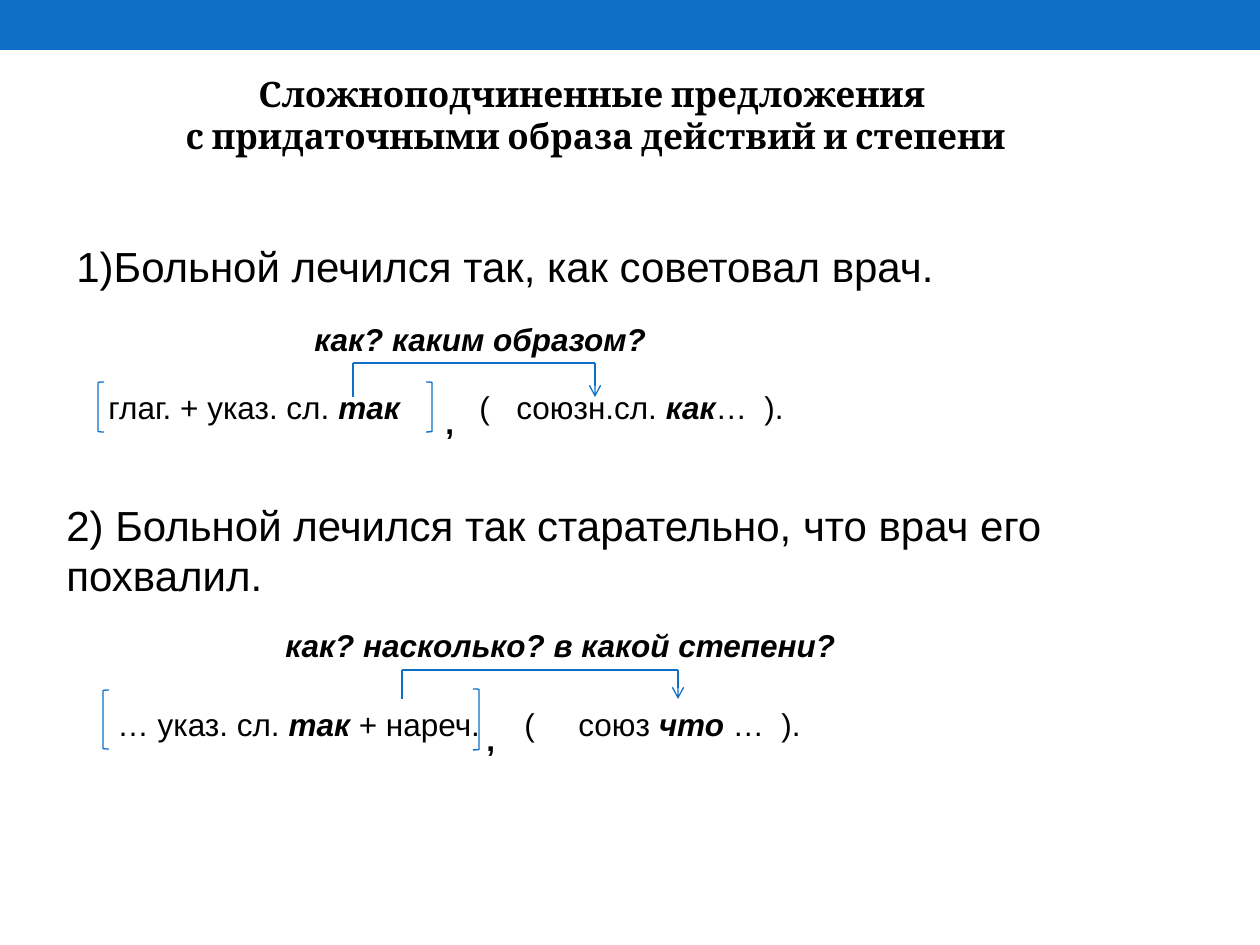
from dataclasses import dataclass
from typing import NamedTuple

import lxml.etree
import pptx
import pptx.dml.color
import pptx.enum.shapes
import pptx.enum.text
import pptx.oxml.ns
import pptx.util

EMU_PER_PX = 914400 / 126
SHAPES = pptx.enum.shapes.MSO_SHAPE


@dataclass(frozen=True)
class Theme:
    accent: pptx.dml.color.RGBColor = pptx.dml.color.RGBColor(0x0F, 0x6F, 0xC6)
    ink: pptx.dml.color.RGBColor = pptx.dml.color.RGBColor(0, 0, 0)
    title_font: str = "Cambria"
    body_font: str = "Arial"
    title_size: int = 20
    sentence_size: int = 24
    scheme_size: int = 18
    line_width: float = 0.75


THEME = Theme()


class Box(NamedTuple):
    left: int
    top: int
    width: int
    height: int


class Run(NamedTuple):
    text: str
    bold: bool = False
    italic: bool = False


class Label(NamedTuple):
    box: Box
    runs: list[Run]
    tabs: tuple[int, ...] = ()


class Arc(NamedTuple):
    left: int
    right: int
    top: int
    bottom: int


@dataclass(frozen=True)
class Scheme:
    sentence: Label
    labels: list[Label]
    left_bracket: Box
    right_bracket: Box
    arc: Arc


def px(value: int) -> pptx.util.Emu:
    return pptx.util.Emu(round(value * EMU_PER_PX))


def term(text: str) -> Run:
    """A bold italic run."""
    return Run(text, True, True)


SCHEMES = [
    Scheme(
        Label(Box(64, 234, 1042, 63), [Run("1)Больной лечился так, как советовал врач.")]),
        [
            Label(Box(96, 382, 320, 50), [Run("глаг. + указ. сл. "), term("так")]),
            Label(Box(433, 397, 35, 50), [Run(",", True)]),
            Label(Box(467, 382, 333, 50),
                  [Run("(\tсоюзн.сл. "), term("как"), Run("…\t).")], (37, 285)),
            Label(Box(302, 314, 369, 50), [term("как? каким образом?")]),
        ],
        Box(98, 382, 6, 50), Box(426, 382, 6, 50), Arc(353, 595, 363, 397),
    ),
    Scheme(
        Label(Box(54, 493, 1131, 115),
              [Run("2) Больной лечился так старательно, что врач его похвалил.")]),
        [
            Label(Box(105, 699, 392, 50),
                  [Run("… указ. сл. "), term("так "), Run("+ нареч.")]),
            Label(Box(474, 714, 43, 50), [Run(",", True)]),
            Label(Box(512, 699, 305, 50),
                  [Run("(\tсоюз "), term("что"), Run(" …\t).")], (54, 257)),
            Label(Box(273, 620, 581, 50), [term("как? насколько? в какой степени?")]),
        ],
        Box(103, 690, 6, 59), Box(473, 689, 6, 61), Arc(402, 678, 670, 699),
    ),
]


def add_run(paragraph, content: Run, font_name: str, size: int) -> None:
    run = paragraph.add_run()
    run.text = content.text
    run.font.name = font_name
    run.font.size = pptx.util.Pt(size)
    run.font.bold = content.bold
    run.font.italic = content.italic
    run.font.color.rgb = THEME.ink


def add_tabs(paragraph, positions: tuple[int, ...]) -> None:
    properties = paragraph._p.get_or_add_pPr()
    tab_list = lxml.etree.SubElement(properties, pptx.oxml.ns.qn("a:tabLst"))
    for position in positions:
        lxml.etree.SubElement(tab_list, pptx.oxml.ns.qn("a:tab"),
                              pos=str(px(position)), algn="l")


def add_label(slide, label: Label, size: int) -> None:
    shape = slide.shapes.add_textbox(*map(px, label.box))
    shape.text_frame.word_wrap = True
    paragraph = shape.text_frame.paragraphs[0]
    if label.tabs:
        add_tabs(paragraph, label.tabs)
    for content in label.runs:
        add_run(paragraph, content, THEME.body_font, size)


def add_bracket(slide, preset: pptx.enum.shapes.MSO_SHAPE, box: Box) -> None:
    bracket = slide.shapes.add_shape(preset, *map(px, box))
    bracket.shadow.inherit = False
    bracket.fill.background()
    bracket.line.color.rgb = THEME.accent
    bracket.line.width = pptx.util.Pt(THEME.line_width)


def add_line(slide, start: tuple[int, int], end: tuple[int, int], arrow: bool = False) -> None:
    line = slide.shapes.add_connector(
        pptx.enum.shapes.MSO_CONNECTOR.STRAIGHT, *map(px, (*start, *end)))
    line.line.color.rgb = THEME.accent
    line.line.width = pptx.util.Pt(THEME.line_width)
    if arrow:
        lxml.etree.SubElement(line.line._get_or_add_ln(),
                              pptx.oxml.ns.qn("a:tailEnd"), type="arrow")
    lxml.etree.SubElement(line._element.spPr, pptx.oxml.ns.qn("a:effectLst"))


def add_arc(slide, arc: Arc) -> None:
    """Link the main clause to the subordinate one with a squared arrow."""
    add_line(slide, (arc.left, arc.top), (arc.right, arc.top))
    add_line(slide, (arc.left, arc.top), (arc.left, arc.bottom))
    add_line(slide, (arc.right, arc.top), (arc.right, arc.bottom), arrow=True)


def add_scheme(slide, scheme: Scheme) -> None:
    add_label(slide, scheme.sentence, THEME.sentence_size)
    add_bracket(slide, SHAPES.LEFT_BRACKET, scheme.left_bracket)
    add_bracket(slide, SHAPES.RIGHT_BRACKET, scheme.right_bracket)
    for label in scheme.labels:
        add_label(slide, label, THEME.scheme_size)
    add_arc(slide, scheme.arc)


def add_banner(slide) -> None:
    banner = slide.shapes.add_shape(SHAPES.RECTANGLE, *map(px, Box(0, 0, 1260, 50)))
    banner.shadow.inherit = False
    banner.fill.solid()
    banner.fill.fore_color.rgb = THEME.accent
    banner.line.fill.background()


def fill_title(slide, lines: list[str]) -> None:
    title = slide.shapes.title
    title.left, title.top, title.width, title.height = map(px, Box(35, 66, 1121, 97))
    frame = title.text_frame
    frame.auto_size = pptx.enum.text.MSO_AUTO_SIZE.NONE
    frame.vertical_anchor = pptx.enum.text.MSO_ANCHOR.TOP
    for index, line in enumerate(lines):
        paragraph = frame.add_paragraph() if index else frame.paragraphs[0]
        paragraph.alignment = pptx.enum.text.PP_ALIGN.CENTER
        add_run(paragraph, Run(line, True), THEME.title_font, THEME.title_size)


def main() -> None:
    presentation = pptx.Presentation()
    presentation.slide_width, presentation.slide_height = px(1260), px(945)
    slide = presentation.slides.add_slide(presentation.slide_layouts[5])
    add_banner(slide)
    fill_title(slide, ["Сложноподчиненные предложения ",
                       "с придаточными образа действий и степени"])
    for scheme in SCHEMES:
        add_scheme(slide, scheme)
    presentation.save("out.pptx")


if __name__ == "__main__":
    main()
